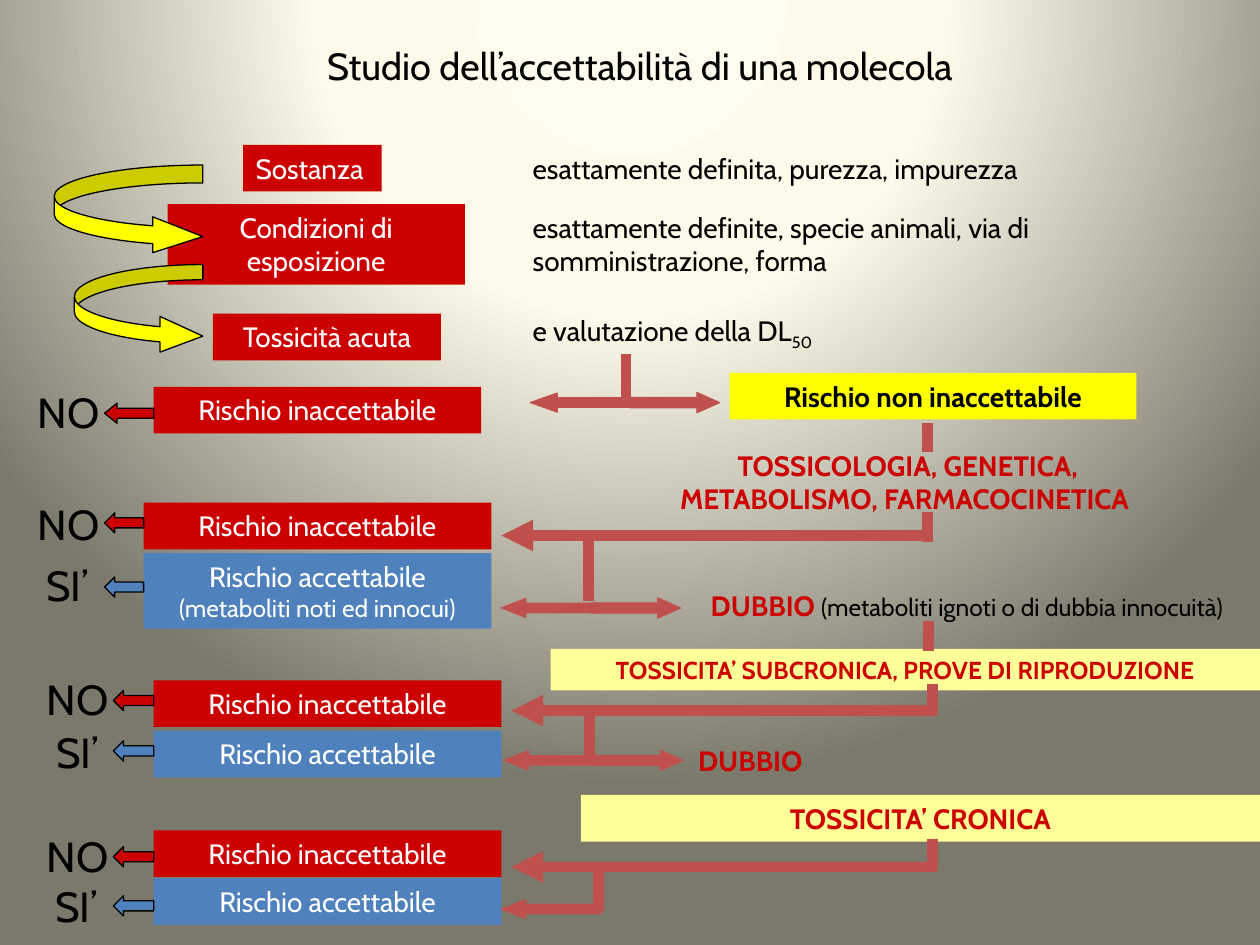
from dataclasses import dataclass
from lxml import etree
from pptx import Presentation
from pptx.dml.color import RGBColor as RGB
from pptx.enum.shapes import MSO_CONNECTOR as Link, MSO_SHAPE as Kind
from pptx.enum.text import MSO_ANCHOR as Anchor, PP_ALIGN as Align
from pptx.oxml import parse_xml
from pptx.oxml.ns import nsdecls, qn
from pptx.util import Inches as In, Pt


@dataclass(frozen=True)
class Theme:
    font: str = "Cabin"
    red: str = "CC0000"
    blue: str = "4F81BD"
    rust: str = "C0504D"
    gold: str = "FFFF00"
    cream: str = "FFFF99"
    black: str = "000000"
    white: str = "FFFFFF"
    head: float = 21.6
    tag: int = 24
    body: int = 16
    small: int = 14
    thin: float = 0.75
    thick: int = 6
    glow: tuple = ((0, "FEFCEE"), (40, "FDFAEA"), (100, "7B796B"))


T = Theme()
ROW = 0.37   # height of a one-line box
TALL = 0.64  # height of a two-line box
BAR = 0.16   # height of a block arrow


def write(shape, *runs, size=T.body, color=T.black, bold=False,
          align=Align.LEFT, anchor=Anchor.TOP):
    """Each run is a text, or a pair of text and its own format."""
    frame = shape.text_frame
    frame.word_wrap = True
    frame.vertical_anchor = anchor
    par = frame.paragraphs[0]
    par.alignment = align
    for item in runs:
        text, own = (item, {}) if isinstance(item, str) else item
        run = par.add_run()
        run.text = text
        font = run.font
        font.name = T.font
        font.size = Pt(own.get("size", size))
        font.bold = own.get("bold", bold)
        font.color.rgb = RGB.from_string(own.get("color", color))
        if "base" in own:
            font._element.set("baseline", str(own["base"] * 1000))


def form(slide, kind, place, fill, line=None):
    shape = slide.shapes.add_shape(kind, *map(In, place))
    shape.shadow.inherit = False
    shape.fill.solid()
    shape.fill.fore_color.rgb = RGB.from_string(fill)
    if line:
        shape.line.color.rgb = RGB.from_string(line)
        shape.line.width = Pt(T.thin)
    else:
        shape.line.fill.background()
    return shape


def box(slide, place, fill, *runs, color=T.white, align=Align.CENTER, **fmt):
    write(form(slide, Kind.RECTANGLE, place, fill), *runs,
          color=color, align=align, **fmt)


def label(slide, place, *runs, **fmt):
    write(slide.shapes.add_textbox(*map(In, place)), *runs, **fmt)


def arrow(slide, kind, place, fill, line, adj, turn=0):
    shape = form(slide, kind, place, fill, line)
    shape.rotation = turn
    for i, share in enumerate(adj):
        shape.adjustments[i] = share


def bar(slide, x1, y1, x2, y2, tip=False):
    line = slide.shapes.add_connector(
        Link.STRAIGHT, In(x1), In(y1), In(x2), In(y2))
    line.line.color.rgb = RGB.from_string(T.rust)
    line.line.width = Pt(T.thick)
    if tip:
        etree.SubElement(line.line._get_or_add_ln(), qn("a:tailEnd"),
                         type="triangle")
    etree.SubElement(line._element.spPr, qn("a:effectLst"))


def paint(slide):
    """Round gradient behind the slide."""
    stops = "".join(f'<a:gs pos="{pos * 1000}"><a:srgbClr val="{color}"/></a:gs>'
                    for pos, color in T.glow)
    slide._element.cSld.insert(0, parse_xml(
        f'<p:bg {nsdecls("p", "a")}><p:bgPr><a:gradFill rotWithShape="1">'
        f'<a:gsLst>{stops}</a:gsLst><a:path path="circle"><a:fillToRect '
        'l="50000" t="-80000" r="50000" b="180000"/></a:path></a:gradFill>'
        '<a:effectLst/></p:bgPr></p:bg>'))


def title(slide, text):
    head = slide.shapes.title
    head.left, head.top, head.width, head.height = map(In, (0.83, 0.28, 8.5, 0.47))
    write(head, text, size=T.head, align=Align.CENTER, anchor=Anchor.MIDDLE)


def steps(slide):
    """Red steps on the left, with their notes on the right."""
    box(slide, (1.93, 1.15, 1.1, ROW), T.red, "Sostanza", align=Align.LEFT)
    box(slide, (1.33, 1.62, 2.36, TALL), T.red, "Condizioni di esposizione")
    box(slide, (1.69, 2.49, 1.81, ROW), T.red, "Tossicità acuta")
    notes = (
        (1.15, ROW, ["esattamente definita, purezza, impurezza"]),
        (1.62, TALL, ["esattamente definite, specie animali, via di "
                      "somministrazione, forma"]),
        (2.44, ROW, ["e valutazione della DL", ("50", {"base": -25})]),
    )
    for top, high, runs in notes:
        label(slide, (4.13, top, 5.43, high), *runs)


def risks(slide):
    """Verdict boxes, each with its small arrow and NO or SI’."""
    bad, good = "Rischio inaccettabile", "Rischio accettabile"
    known = (good + " ", ("(metaboliti noti ed innocui)", {"size": T.small}))
    rows = (  # left, top, width, height, fill, runs, tag place, arrow place
        (1.22, 3.07, 2.6, ROW, T.red, [bad], (0.2, 3.02), (0.83, 3.2)),
        (1.14, 3.99, 2.76, ROW, T.red, [bad], (0.2, 3.91), (0.83, 4.07)),
        (1.14, 4.39, 2.76, 0.6, T.blue, known, (0.27, 4.39), (0.83, 4.58)),
        (1.22, 5.4, 2.76, ROW, T.red, [bad], (0.27, 5.3), (0.9, 5.48)),
        (1.22, 5.8, 2.76, ROW, T.blue, [good], (0.35, 5.72), (0.9, 5.88)),
        (1.22, 6.59, 2.76, ROW, T.red, [bad], (0.27, 6.54), (0.9, 6.72)),
        (1.22, 6.97, 2.76, ROW, T.blue, [good], (0.34, 6.94), (0.9, 7.11)),
    )
    for left, top, wide, high, fill, runs, tag, tip in rows:
        box(slide, (left, top, wide, high), fill, *runs)
        label(slide, (*tag, 0.71, 0.5), "NO" if fill == T.red else "SI’",
              size=T.tag)
        span = left - tip[0]
        arrow(slide, Kind.LEFT_ARROW, (*tip, span, BAR), fill, T.black,
              (0.5, 0.62 if span > 0.35 else 0.5))


def tests(slide):
    """Further tests and doubtful cases on the right."""
    bold = dict(color=T.red, bold=True, align=Align.CENTER)
    box(slide, (5.79, 2.96, 3.23, ROW), T.gold, "Rischio non inaccettabile",
        color=T.black, bold=True)
    label(slide, (5, 3.51, 4.41, TALL),
          "TOSSICOLOGIA, GENETICA, METABOLISMO, FARMACOCINETICA ", **bold)
    label(slide, (5.35, 4.62, 4.65, ROW), "DUBBIO ",
          ("(metaboliti ignoti o di dubbia innocuità)",
           dict(size=T.small, color=T.black, bold=False)), **bold)
    box(slide, (4.37, 5.15, 5.63, 0.33), T.cream,
        "TOSSICITA’ SUBCRONICA, PROVE DI RIPRODUZIONE", size=T.small, **bold)
    label(slide, (4.6, 5.85, 2.76, ROW), "DUBBIO ", **bold)
    box(slide, (4.61, 6.31, 5.39, ROW), T.cream, "TOSSICITA’ CRONICA", **bold)


def flow(slide):
    """Curved arrows between steps, forks and bars between tests."""
    for place, adj in (((0.43, 1.31, 1.18, 0.71), (0.2, 0.4, 0.56)),
                       ((0.59, 2.1, 1.02, 0.71), (0.17, 0.4, 0.48))):
        arrow(slide, Kind.CURVED_RIGHT_ARROW, place, T.gold, T.black, adj)
    # left, top, width of the left prong, head, left of the right prong
    for left, top, wide, head, right in (
            (4.21, 3.12, 0.87, 1.42, 5), (3.98, 4.75, 0.79, 1.29, 4.69),
            (4, 5.96, 0.79, 1.29, 4.71), (3.98, 7.14, 0.79, 1.29, None)):
        arrow(slide, Kind.LEFT_ARROW, (left, top, wide, 0.15),
              T.rust, T.rust, (0.5, head))
        if right:
            arrow(slide, Kind.LEFT_ARROW, (right, top - 0.005, 0.71, BAR),
                  T.rust, T.rust, (0.5, 1.12), turn=180)
    # upright bars: x, top, bottom
    for x, top, low in ((4.97, 2.81, 3.2), (7.36, 3.36, 3.59),
                        (7.36, 4.06, 4.3), (7.37, 4.93, 5.17),
                        (7.4, 5.43, 5.66), (4.68, 5.64, 6.03),
                        (4.67, 4.22, 4.77), (7.4, 6.66, 6.9),
                        (4.75, 6.84, 7.23)):
        bar(slide, x, top, x, low)
    # long bars that point back to the verdicts
    for left, y in ((3.98, 4.25), (4.06, 5.64), (4.06, 6.88)):
        bar(slide, left + 3.38, y, left, y, tip=True)


def main():
    deck = Presentation()
    deck.slide_width, deck.slide_height = In(10), In(7.5)
    slide = deck.slides.add_slide(deck.slide_layouts[5])
    paint(slide)
    title(slide, "Studio dell’accettabilità di una molecola")
    steps(slide)
    risks(slide)
    tests(slide)
    flow(slide)
    deck.save("out.pptx")


if __name__ == "__main__":
    main()
